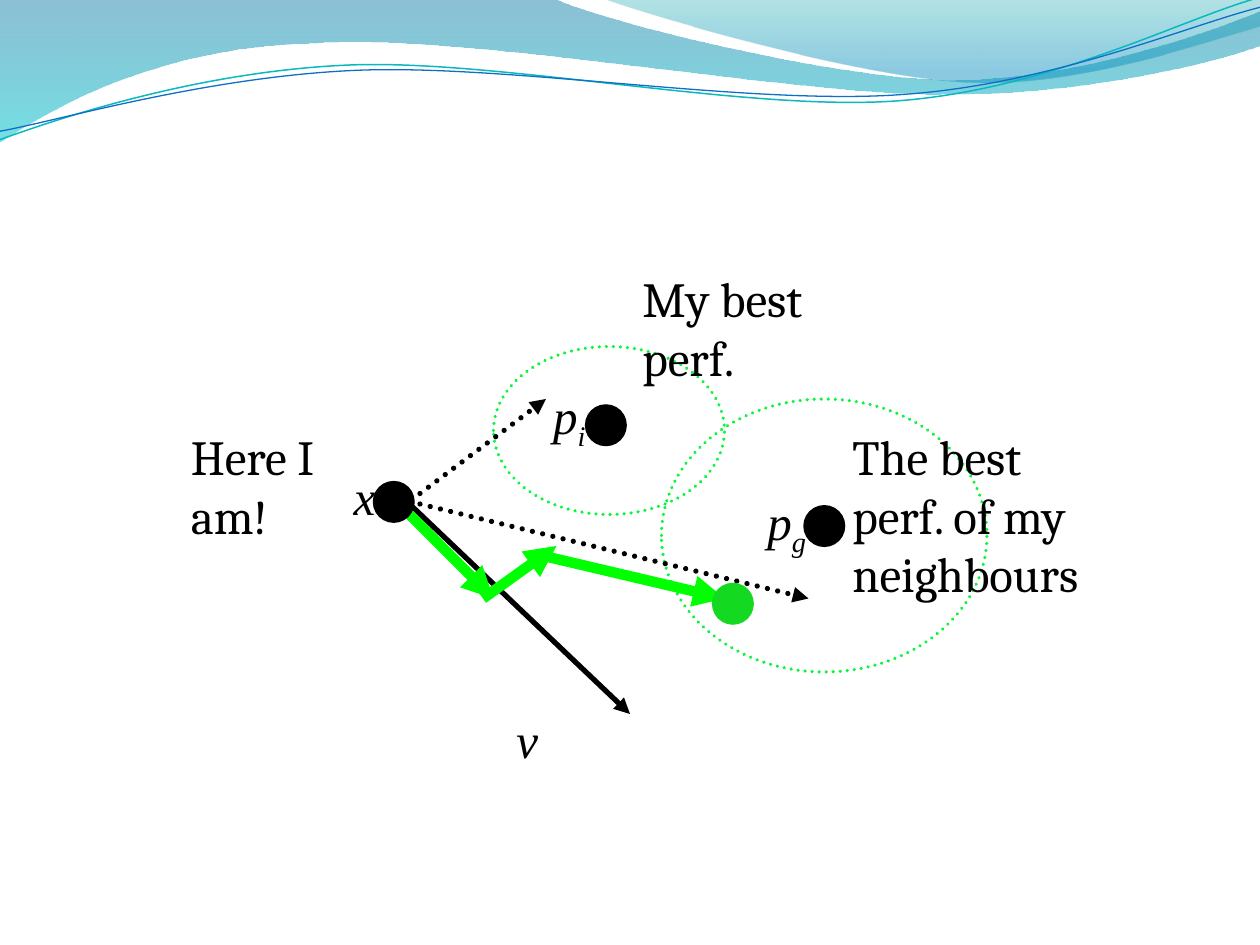
import pptx
import pptx.dml.color
import pptx.enum.dml
import pptx.enum.shapes
import pptx.enum.text
import pptx.oxml
import pptx.oxml.ns
import pptx.util

PX = 7620  # EMU per px, at 120 px to the inch
DOTTED = pptx.enum.dml.MSO_LINE.ROUND_DOT
OVAL = pptx.enum.shapes.MSO_SHAPE.OVAL
STRAIGHT = pptx.enum.shapes.MSO_CONNECTOR.STRAIGHT
qn = pptx.oxml.ns.qn


def color(hex_code):
    return pptx.dml.color.RGBColor.from_string(hex_code)


def new_element(tag, **attributes):
    """Make an empty DrawingML element."""
    element = pptx.oxml.parse_xml(f'<a:{tag} {pptx.oxml.ns.nsdecls("a")}/>')
    for name, value in attributes.items():
        element.set(name, value)
    return element


def add_text(text, box, font="Cambria", italic=False, subscript="", wrap=True, anchor="TOP"):
    left, top, width, height = (v * PX for v in box)
    frame = slide.shapes.add_textbox(left, top, width, height).text_frame
    frame.word_wrap = wrap
    frame.vertical_anchor = pptx.enum.text.MSO_ANCHOR[anchor]
    for part in filter(None, (text, subscript)):
        run = frame.paragraphs[0].add_run()
        run.text = part
        run.font.name = font
        run.font.size = pptx.util.Pt(28)
        run.font.italic = italic
        run.font.color.rgb = color("000000")
        if part is subscript:
            run.font._element.set("baseline", "-25000")


prs = pptx.Presentation()
prs.slide_width, prs.slide_height = 1200 * PX, 900 * PX
slide = prs.slides.add_slide(prs.slide_layouts[6])

# Waves across the top: start point, then segments of one point (line) or three (curve).
# A filled wave has gradient stops (position, colour, opacity); others have (colour, width).
waves = [
    ([(0, 0), [(528, -1)],
      [(571, 20), (797, 76), (910, 76)], [(1024, 76), (1150, 31), (1200, 11)],
      [(1201, 43)],
      [(1180, 53), (1044, 91), (895, 90)], [(746, 90), (458, 34), (308, 41)],
      [(155, 43), (55, 100), (-1, 136)], [(0, 0)]],
     [(0, "0074A1", 45), (1, "00C6CF", 55)], None),
    ([(575, -1),
      [(611, 13), (818, 74), (923, 78)], [(1027, 83), (1153, 38), (1200, 25)],
      [(1200, 0)], [(575, -1)]],
     [(0, "00A1A9", 30), (0.8, "008BBF", 45)], None),
    ([(0, 133),
      [(58, 112), (190, 68), (332, 62)], [(474, 56), (712, 107), (856, 96)],
      [(1000, 85), (1126, 18), (1198, -2)]],
     None, ("0AB8BF", 0.85)),
    ([(0, 125),
      [(56, 115), (197, 73), (340, 67)], [(484, 61), (716, 101), (860, 90)],
      [(1003, 80), (1129, 25), (1200, 7)]],
     None, ("0F6FC6", 0.75)),
]
for (start, *segments), stops, outline in waves:
    builder = slide.shapes.build_freeform(*start, scale=PX)
    builder.add_line_segments(sum(segments, []), close=stops is not None)
    wave = builder.convert_to_shape()
    wave.shadow.inherit = False

    # Turn each run of three line points into one Bézier curve
    lines = iter(list(wave._element.spPr.iter(qn("a:lnTo"))))
    for segment in segments:
        pieces = [next(lines) for _ in segment]
        if len(pieces) == 3:
            curve = new_element("cubicBezTo")
            pieces[0].addprevious(curve)
            for piece in pieces:
                curve.append(piece[0])
                piece.getparent().remove(piece)

    if stops:
        wave.line.fill.background()
        wave.fill.gradient()
        wave.fill.gradient_angle = 270
        for stop, (position, hex_code, _) in zip(wave.fill.gradient_stops, stops):
            stop.position = position
            stop.color.rgb = color(hex_code)
        for tint, (_, _, opacity) in zip(wave._element.spPr.iter(qn("a:srgbClr")), stops):
            tint.append(new_element("alpha", val=str(opacity * 1000)))
    else:
        wave.fill.background()
        wave.line.color.rgb = color(outline[0])
        wave.line.width = pptx.util.Pt(outline[1])

# Search regions around the two best positions
for region_box in [(630, 380, 310, 260), (470, 330, 220, 160)]:
    region = slide.shapes.add_shape(OVAL, *(v * PX for v in region_box))
    region.shadow.inherit = False
    region.fill.background()
    region.line.color.rgb = color("0BF53D")
    region.line.width = pptx.util.Pt(2)
    region.line.dash_style = DOTTED
    region.line._ln.set("cap", "rnd")

add_text("Here I am!", (170, 400, 200, 124))
add_text("The best perf. of my neighbours", (800, 400, 280, 180))
add_text("My best perf.", (600, 250, 200, 124))

# Velocity, pulls towards the best positions, then the resulting moves
arrows = [
    ((390, 480, 600, 680), "000000", 3, None),
    ((400, 470, 520, 380), "000000", 3, DOTTED),
    ((400, 480, 770, 570), "000000", 3, DOTTED),
    ((390, 490, 470, 570), "00FF00", 6, None),
    ((460, 570, 530, 520), "00FF00", 6, None),
    ((520, 530, 690, 570), "00FF00", 6, None),
]
for ends, hex_code, width, dash in arrows:
    arrow = slide.shapes.add_connector(STRAIGHT, *(v * PX for v in ends))
    arrow.line.color.rgb = color(hex_code)
    arrow.line.width = pptx.util.Pt(width)
    if dash:
        arrow.line.dash_style = dash
        arrow.line._ln.set("cap", "rnd")
    arrow.line._ln.append(new_element("tailEnd", type="triangle"))
    arrow._element.spPr.append(new_element("effectLst"))

symbol = {"font": "Times New Roman", "italic": True}
add_text("x", (325, 438, 70, 68), **symbol)
add_text("p", (719, 462, 110, 68), subscript="g", **symbol)
add_text("p", (515, 361, 70, 68), subscript="i", **symbol)
add_text("v", (480, 670, 44, 68), wrap=False, anchor="MIDDLE", **symbol)

DOT = 40
for left, top, hex_code in [(355, 458, "000000"), (765, 481, "000000"),
                            (557, 385, "000000"), (678, 555, "13D921")]:
    position_dot = slide.shapes.add_shape(OVAL, left * PX, top * PX, DOT * PX, DOT * PX)
    position_dot.shadow.inherit = False
    position_dot.fill.solid()
    position_dot.fill.fore_color.rgb = color(hex_code)
    position_dot.line.fill.background()

prs.save("out.pptx")
